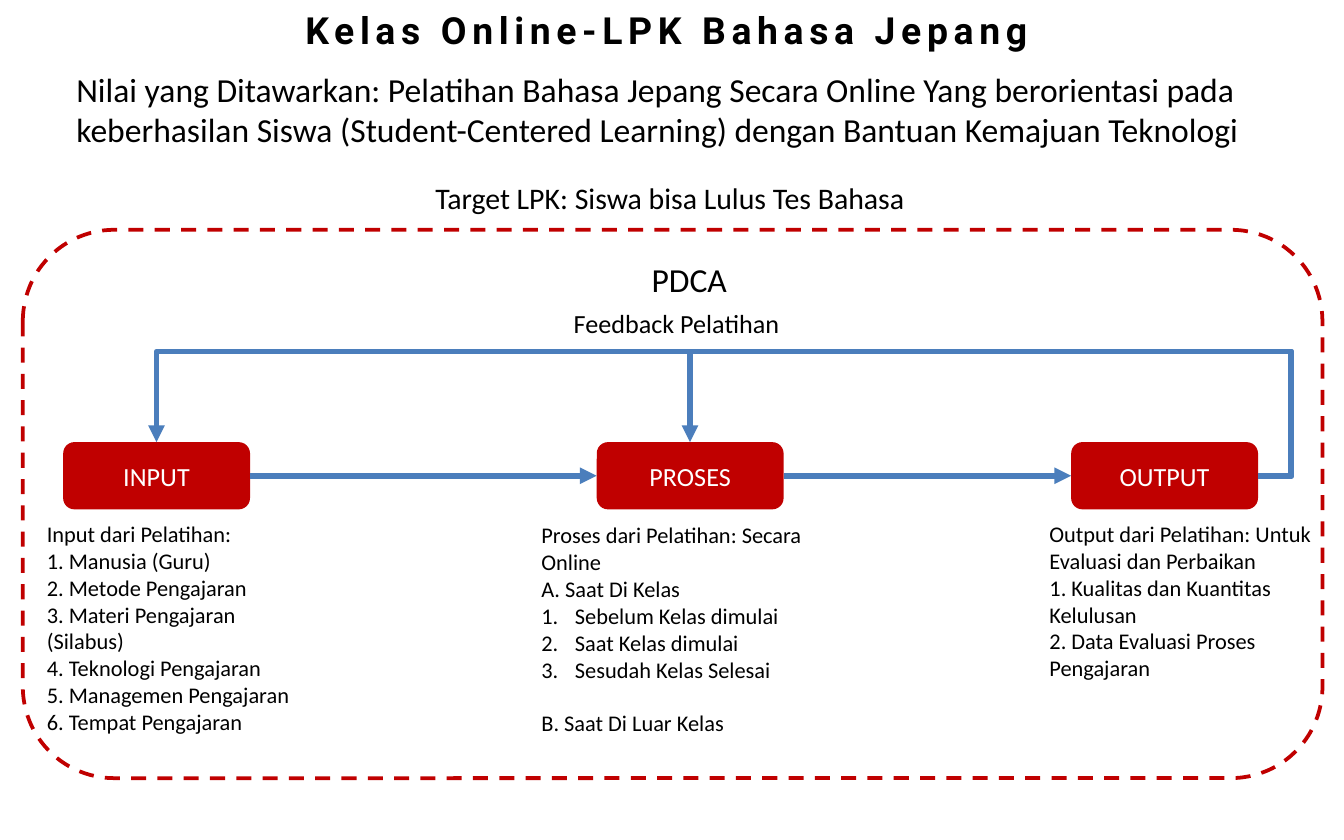
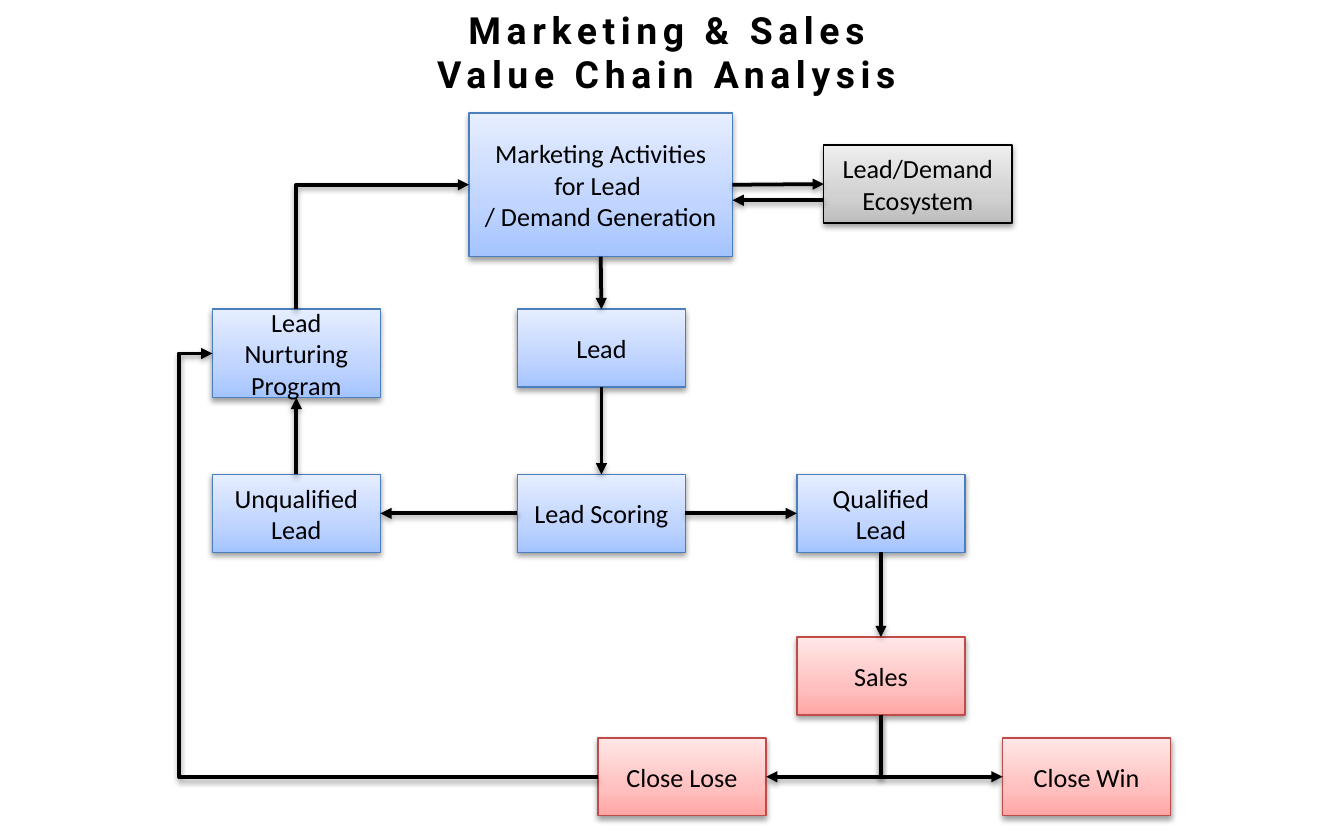
from copy import deepcopy

from lxml import etree
from pptx import Presentation
from pptx.dml.color import RGBColor
from pptx.enum.dml import MSO_LINE
from pptx.enum.shapes import MSO_CONNECTOR, MSO_SHAPE
from pptx.enum.text import MSO_ANCHOR, MSO_AUTO_SIZE, PP_ALIGN
from pptx.oxml.ns import qn
from pptx.util import Inches, Pt

RECT, ROUND = MSO_SHAPE.RECTANGLE, MSO_SHAPE.ROUNDED_RECTANGLE
STRAIGHT, ELBOW = MSO_CONNECTOR.STRAIGHT, MSO_CONNECTOR.ELBOW
TOP, MIDDLE = MSO_ANCHOR.TOP, MSO_ANCHOR.MIDDLE
LEFT, CENTER = PP_ALIGN.LEFT, PP_ALIGN.CENTER
GROW = MSO_AUTO_SIZE.SHAPE_TO_FIT_TEXT
DASH = MSO_LINE.DASH

BLACK = RGBColor(0, 0, 0)
WHITE = RGBColor(255, 255, 255)
RED = RGBColor(0xC0, 0, 0)
BLUE = RGBColor(0x4B, 0x7E, 0xBC)
ROSE = RGBColor(0xBF, 0x4C, 0x48)

# Fill stops (bottom to top) and line colour of each tone
TONES = {
    "blue": (("A4C4FF", "BFD4FF", "E6EEFF"), BLUE),
    "grey": (("BDBDBD", "D1D1D1", "EEEEEE"), BLACK),
    "red": (("FFA6A5", "FFC0BF", "FFE7E7"), ROSE),
}
STOPS = (0, 0.35, 1)
HEAD = {"name": "Roboto", "size": Pt(20), "bold": True}

# Connection sites of a box
UP, WEST, DOWN, EAST = range(4)

# Slide 1: training loop
LOOP_TITLE = "Kelas Online-LPK Bahasa Jepang"
STEPS = [("INPUT", 0.47), ("PROSES", 4.44), ("OUTPUT", 7.97)]
STEP_TOP, STEP_W, STEP_H = 3.29, 1.39, 0.5
FRAME = (0.17, 1.71, 9.67, 4.08)
LOOP_LINKS = [
    ("INPUT", EAST, "PROSES", WEST),
    ("PROSES", EAST, "OUTPUT", WEST),
    ("OUTPUT", EAST, "PROSES", UP, ("bentConnector4", 0, "hv", (-0.059, 3.7))),
    ("OUTPUT", EAST, "INPUT", UP, ("bentConnector4", 0, "hv", (-0.03, 3.7))),
]
# Place, size, wrap, lines; "#" starts a numbered line, "^" leaves a line free above
NOTES = [
    ((0.47, 0.46, 9.03, 0.71), 18, True, [
        "Nilai yang Ditawarkan: Pelatihan Bahasa Jepang Secara Online Yang "
        "berorientasi pada keberhasilan Siswa (Student-Centered Learning) "
        "dengan Bantuan Kemajuan Teknologi"]),
    ((3.14, 1.29, 3.99, 0.37), 16, True,
     ["Target LPK: Siswa bisa Lulus Tes Bahasa"]),
    ((4.75, 1.88, 0.77, 0.4), 18, False, ["PDCA"]),
    ((4.17, 2.24, 1.75, 0.34), 14, False, ["Feedback Pelatihan"]),
    ((0.25, 3.82, 2.21, 1.72), 12, True, [
        "Input dari Pelatihan:",
        "1. Manusia (Guru)",
        "2. Metode Pengajaran",
        "3. Materi Pengajaran (Silabus)",
        "4. Teknologi Pengajaran",
        "5. Managemen Pengajaran",
        "6. Tempat Pengajaran"]),
    ((3.93, 3.83, 2.57, 1.72), 12, True, [
        "Proses dari Pelatihan: Secara Online",
        "A. Saat Di Kelas",
        "#Sebelum Kelas dimulai",
        "#Saat Kelas dimulai",
        "#Sesudah Kelas Selesai",
        "^B. Saat Di Luar Kelas"]),
    ((7.71, 3.82, 2.21, 1.31), 12, True, [
        "Output dari Pelatihan: Untuk Evaluasi dan Perbaikan",
        "1. Kualitas dan Kuantitas Kelulusan",
        "2. Data Evaluasi Proses Pengajaran"]),
]

# Slide 2: sales flow
FLOW_TITLE = "Marketing & Sales\nValue Chain Analysis"
W, H = 1.25, 0.58
BOXES = {
    "market": ("Marketing Activities for Lead \n/ Demand Generation",
               "blue", (3.49, 0.84, 1.96, 1.07)),
    "system": ("Lead/Demand Ecosystem", "grey", (6.13, 1.08, 1.4, H)),
    "lead": ("Lead", "blue", (3.85, 2.3, W, H)),
    "score": ("Lead Scoring", "blue", (3.85, 3.53, W, H)),
    "good": ("Qualified Lead", "blue", (5.93, 3.53, W, H)),
    "weak": ("Unqualified Lead", "blue", (1.58, 3.53, W, H)),
    "sales": ("Sales", "red", (5.93, 4.74, W, H)),
    "nurture": ("Lead Nurturing Program", "blue", (1.58, 2.3, W, 0.66)),
    "win": ("Close Win", "red", (7.46, 5.49, W, H)),
    "lose": ("Close Lose", "red", (4.45, 5.49, W, H)),
}
FLOW_LINKS = [
    ("market", DOWN, "lead", UP),
    ("market", EAST, "system", WEST),
    ("lead", DOWN, "score", UP),
    ("score", EAST, "good", WEST),
    ("good", DOWN, "sales", UP),
    ("score", WEST, "weak", EAST),
    ("weak", UP, "nurture", DOWN),
    ("nurture", UP, "market", WEST, ("bentConnector2", 90, "hv", ())),
    ("sales", DOWN, "win", WEST, ("bentConnector2", 270, "h", ())),
    ("sales", DOWN, "lose", EAST, ("bentConnector2", 90, "", ())),
    ("lose", WEST, "nurture", WEST, ("bentConnector3", 180, "", (1.087,))),
]
BACK = (6.13, 1.49, 5.45, 1.49)


def inch(vals):
    return [Inches(v) for v in vals]


def node(parent, tag, **attrs):
    return etree.SubElement(parent, qn(tag), attrs)


def style(para, look, color, align):
    para.alignment = align
    for run in para.runs:
        for key, val in look.items():
            setattr(run.font, key, val)
        run.font.color.rgb = color


def plain(size):
    return {"name": "Calibri", "size": Pt(size)}


def shade(part, soft):
    """Close the effect list, with a soft drop shadow if asked."""
    effects = node(part.element.spPr, "a:effectLst")
    if soft:
        drop = node(effects, "a:outerShdw", blurRad="40000", dist="20000",
                    dir="5400000", rotWithShape="0")
        node(node(drop, "a:srgbClr", val="000000"), "a:alpha", val="38000")


def new_slide(prs, title, height):
    slide = prs.slides.add_slide(prs.slide_layouts[5])
    head = slide.shapes.title
    head.left, head.top, head.width, head.height = inch((0.25, 0, 9.42, height))
    frame = head.text_frame
    frame.text = title
    frame.vertical_anchor = TOP
    frame.auto_size = GROW
    for para in frame.paragraphs:
        style(para, HEAD, BLACK, CENTER)
        for run in para.runs:
            run.font._element.set("spc", "300")
    return slide


def add_note(slide, place, size, wrap, lines):
    frame = slide.shapes.add_textbox(*inch(place)).text_frame
    frame.word_wrap = wrap
    frame.auto_size = GROW
    frame.text = "\n".join(line.lstrip("#^") for line in lines)
    for para, line in zip(frame.paragraphs, lines):
        if line.startswith("#"):
            props = para._p.get_or_add_pPr()
            props.set("marL", str(Inches(0.25)))
            props.set("indent", str(-Inches(0.25)))
            node(props, "a:buFont", typeface="+mj-lt")
            node(props, "a:buAutoNum", type="arabicPeriod")
        elif line.startswith("^"):
            para.space_before = Pt(size * 1.2)
        style(para, plain(size), BLACK, LEFT)


def add_box(slide, kind, place, text, color):
    box = slide.shapes.add_shape(kind, *inch(place))
    frame = box.text_frame
    frame.text = text
    frame.word_wrap = True
    frame.vertical_anchor = MIDDLE
    for para in frame.paragraphs:
        style(para, plain(14), color, CENTER)
    return box


def tint(box, tone):
    hues, edge = TONES[tone]
    box.fill.gradient()
    box.fill.gradient_angle = 90
    stops = box.element.spPr.find(".//" + qn("a:gsLst"))
    stops.insert(1, deepcopy(stops[0]))
    for stop, hue, pos in zip(box.fill.gradient_stops, hues, STOPS):
        stop.color.rgb = RGBColor.from_string(hue)
        stop.position = pos
    box.line.color.rgb = edge
    box.line.width = Pt(0.75)
    shade(box, True)


def bend(link, preset, turn, flips, adjust):
    """Give an elbow its preset, turn, flips and bend points."""
    if turn % 180:
        wide, high = link.width, link.height
        link.left += (wide - high) // 2
        link.top += (high - wide) // 2
        link.width, link.height = high, wide
    props = link.element.spPr
    xfrm = props.find(qn("a:xfrm"))
    xfrm.set("rot", str(turn * 60000))
    for axis in "hv":
        xfrm.set("flip" + axis.upper(), str(int(axis in flips)))
    geom = props.find(qn("a:prstGeom"))
    geom.set("prst", preset)
    guides = geom.find(qn("a:avLst"))
    for num, val in enumerate(adjust, 1):
        node(guides, "a:gd", name=f"adj{num}", fmla=f"val {round(val * 100000)}")


def arrow(link, color, width, soft):
    link.line.color.rgb = color
    link.line.width = Pt(width)
    node(link.element.spPr.find(qn("a:ln")), "a:tailEnd", type="triangle")
    shade(link, soft)


def join(slide, boxes, links, *look):
    for start, out, end, into, *bends in links:
        link = slide.shapes.add_connector(ELBOW if bends else STRAIGHT, 0, 0, 0, 0)
        link.begin_connect(boxes[start], out)
        link.end_connect(boxes[end], into)
        if bends:
            bend(link, *bends[0])
        arrow(link, *look)


def loop_slide(prs):
    slide = new_slide(prs, LOOP_TITLE, 0.44)
    boxes = {}
    for name, left in STEPS:
        box = add_box(slide, ROUND, (left, STEP_TOP, STEP_W, STEP_H), name, WHITE)
        box.fill.solid()
        box.fill.fore_color.rgb = RED
        box.line.fill.background()
        shade(box, False)
        boxes[name] = box
    join(slide, boxes, LOOP_LINKS, BLUE, 3, False)
    for note in NOTES:
        add_note(slide, *note)
    # Dashed frame round the loop
    frame = slide.shapes.add_shape(ROUND, *inch(FRAME))
    frame.fill.background()
    frame.line.color.rgb = RED
    frame.line.width = Pt(2)
    frame.line.dash_style = DASH
    shade(frame, False)


def flow_slide(prs):
    slide = new_slide(prs, FLOW_TITLE, 0.77)
    boxes = {}
    for name, (text, tone, place) in BOXES.items():
        boxes[name] = add_box(slide, RECT, place, text, BLACK)
        tint(boxes[name], tone)
    join(slide, boxes, FLOW_LINKS, BLACK, 2, True)
    # Return arrow from the ecosystem
    arrow(slide.shapes.add_connector(STRAIGHT, *inch(BACK)), BLACK, 2, True)


def main():
    prs = Presentation()
    prs.slide_width, prs.slide_height = inch((10, 6.25))
    loop_slide(prs)
    flow_slide(prs)
    prs.save("out.pptx")


if __name__ == "__main__":
    main()
